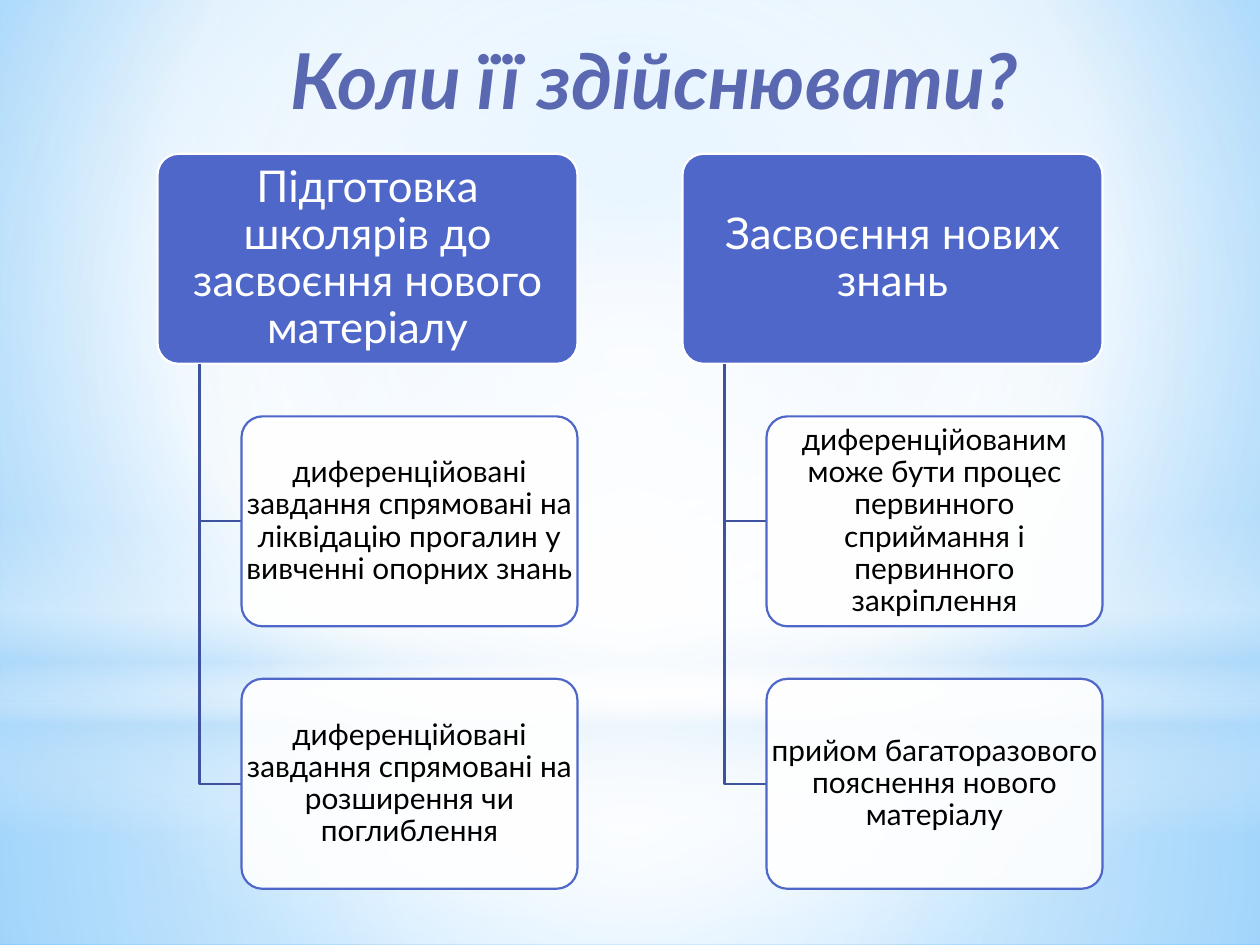
from pptx import Presentation
from pptx.dml.color import RGBColor
from pptx.enum.shapes import MSO_SHAPE
from pptx.enum.text import MSO_ANCHOR, MSO_AUTO_SIZE, PP_ALIGN
from pptx.oxml import parse_xml
from pptx.oxml.ns import nsdecls, qn
from pptx.util import Pt

RECT, OVAL, ROUND = MSO_SHAPE.RECTANGLE, MSO_SHAPE.OVAL, MSO_SHAPE.ROUNDED_RECTANGLE
TOP, MIDDLE = MSO_ANCHOR.TOP, MSO_ANCHOR.MIDDLE
CENTER = PP_ALIGN.CENTER
GROW = MSO_AUTO_SIZE.SHAPE_TO_FIT_TEXT

TITLE = "Коли її здійснювати?"
COLUMNS = [
    ("Підготовка школярів до засвоєння нового матеріалу", [
        "диференційовані завдання спрямовані на ліквідацію прогалин у вивченні опорних знань",
        "диференційовані завдання спрямовані на розширення чи поглиблення",
    ]),
    ("Засвоєння нових знань", [
        "диференційованим може бути процес первинного сприймання і первинного закріплення",
        "прийом багаторазового пояснення нового матеріалу",
    ]),
]
COLORS = {
    "white": "FFFFFF", "black": "000000", "title": "5968B0", "card": "4E67C8",
    "branch": "3E52A0", "mist": "B4DCFA", "sky": "9ED5FF", "azure": "5BB9FF",
}
FONT = "Lato"
MIDPOINT = (50, 50, 50, 50)
BACKDROP = [(0, "sky", 100), (60, "white", 100), (100, "azure", 100)]
GLOWS = [
    (RECT, (0, 402, 720, 138), MIDPOINT,
     [(0, "white", 91), (37, "white", 76), (100, "mist", 79)]),
    (RECT, (0, 0, 720, 402), MIDPOINT,
     [(0, "white", 89), (48, "white", 62), (100, "mist", 79)]),
    (RECT, (0, 297, 720, 180), None,
     [(0, "white", 0), (29, "white", 30), (45, "mist", 40),
      (55, "white", 26), (65, "mist", 60), (100, "white", 0)]),
    (OVAL, (0, 126, 720, 402), MIDPOINT, [(0, "white", 100), (56, "white", 0)]),
]
LEFT, TOP_Y, COLUMN_STEP, ROW_STEP = 90, 87.9, 300, 150
HEAD_W, CARD_H, INDENT = 240, 120, 48


def rgb(name):
    return RGBColor.from_string(COLORS[name])


def set_gradient(fill, root, stops, focus):
    fill.gradient()
    marks = "".join(
        f'<a:gs pos="{pos * 1000}"><a:srgbClr val="{COLORS[name]}">'
        f'<a:alpha val="{alpha * 1000}"/></a:srgbClr></a:gs>'
        for pos, name, alpha in stops)
    if focus:
        l, t, r, b = (side * 1000 for side in focus)
        shade = (f'<a:path path="circle"><a:fillToRect l="{l}" t="{t}" '
                 f'r="{r}" b="{b}"/></a:path>')
    else:
        shade = '<a:lin ang="5400000" scaled="0"/>'
    old = next(root.iter(qn("a:gradFill")))
    old.getparent().replace(old, parse_xml(
        f'<a:gradFill {nsdecls("a")} rotWithShape="1">'
        f'<a:gsLst>{marks}</a:gsLst>{shade}</a:gradFill>'))


def write(sp, text, size, color, bold=False, italic=False, anchor=MIDDLE,
          spacing=0.9, margins=None):
    tf = sp.text_frame
    tf.word_wrap = True
    tf.vertical_anchor = anchor
    if margins:
        tf.margin_left = tf.margin_right = Pt(margins[0])
        tf.margin_top = tf.margin_bottom = Pt(margins[1])
    p = tf.paragraphs[0]
    p.alignment = CENTER
    p.line_spacing = spacing
    r = p.add_run()
    r.text = text
    r.font.name, r.font.size = FONT, Pt(size)
    r.font.bold, r.font.italic = bold, italic
    r.font.color.rgb = rgb(color)


def add_card(shapes, box, text, size, fill, line, color, alpha=100):
    box = [Pt(v) for v in box]
    sp = shapes.add_shape(ROUND, *box)
    sp.adjustments[0] = 0.1
    sp.shadow.inherit = False
    sp.fill.solid()
    sp.fill.fore_color.rgb = rgb(fill)
    if alpha < 100:
        tint = next(sp.element.spPr.iter(qn("a:srgbClr")))
        tint.append(parse_xml(f'<a:alpha {nsdecls("a")} val="{alpha * 1000}"/>'))
    sp.line.color.rgb = rgb(line)
    sp.line.width = Pt(1.25)
    write(shapes.add_textbox(*box), text, size, color,
          margins=(0.15 * size, 0.1 * size))


def add_branch(shapes, x, top, bottom, end):
    builder = shapes.build_freeform(Pt(x), Pt(top))
    builder.add_line_segments([(Pt(x), Pt(bottom)), (Pt(end), Pt(bottom))], close=False)
    sp = builder.convert_to_shape()
    sp.shadow.inherit = False
    sp.fill.background()
    sp.line.color.rgb = rgb("branch")
    sp.line.width = Pt(1.25)


def main():
    """Build the slide and save it."""
    prs = Presentation()
    prs.slide_width, prs.slide_height = Pt(720), Pt(540)
    s = prs.slides.add_slide(prs.slide_layouts[5])
    set_gradient(s.background.fill, s.element, BACKDROP, (20, 10, 20, 60))

    for kind, box, focus, stops in GLOWS:
        sp = s.shapes.add_shape(kind, *(Pt(v) for v in box))
        sp.shadow.inherit = False
        sp.line.fill.background()
        set_gradient(sp.fill, sp.element, stops, focus)

    shapes = s.shapes.add_group_shape().shapes
    for col, (heading, items) in enumerate(COLUMNS):
        x = LEFT + col * COLUMN_STEP
        add_card(shapes, (x, TOP_Y, HEAD_W, CARD_H), heading, 25,
                 "card", "white", "white")
        for row, item in enumerate(items, 1):
            y = TOP_Y + row * ROW_STEP
            add_branch(shapes, x + INDENT / 2, TOP_Y + CARD_H, y + CARD_H / 2, x + INDENT)
            add_card(shapes, (x + INDENT, y, HEAD_W - INDENT, CARD_H), item, 17,
                     "white", "card", "black", alpha=90)

    title = s.shapes.title
    title.left, title.top, title.width, title.height = Pt(42.5), Pt(15), Pt(663), Pt(60.5)
    write(title, TITLE, 44, "title", bold=True, italic=True, anchor=TOP, spacing=1.0)
    title.text_frame.auto_size = GROW
    title.element.getparent().append(title.element)

    prs.save("out.pptx")


if __name__ == "__main__":
    main()
